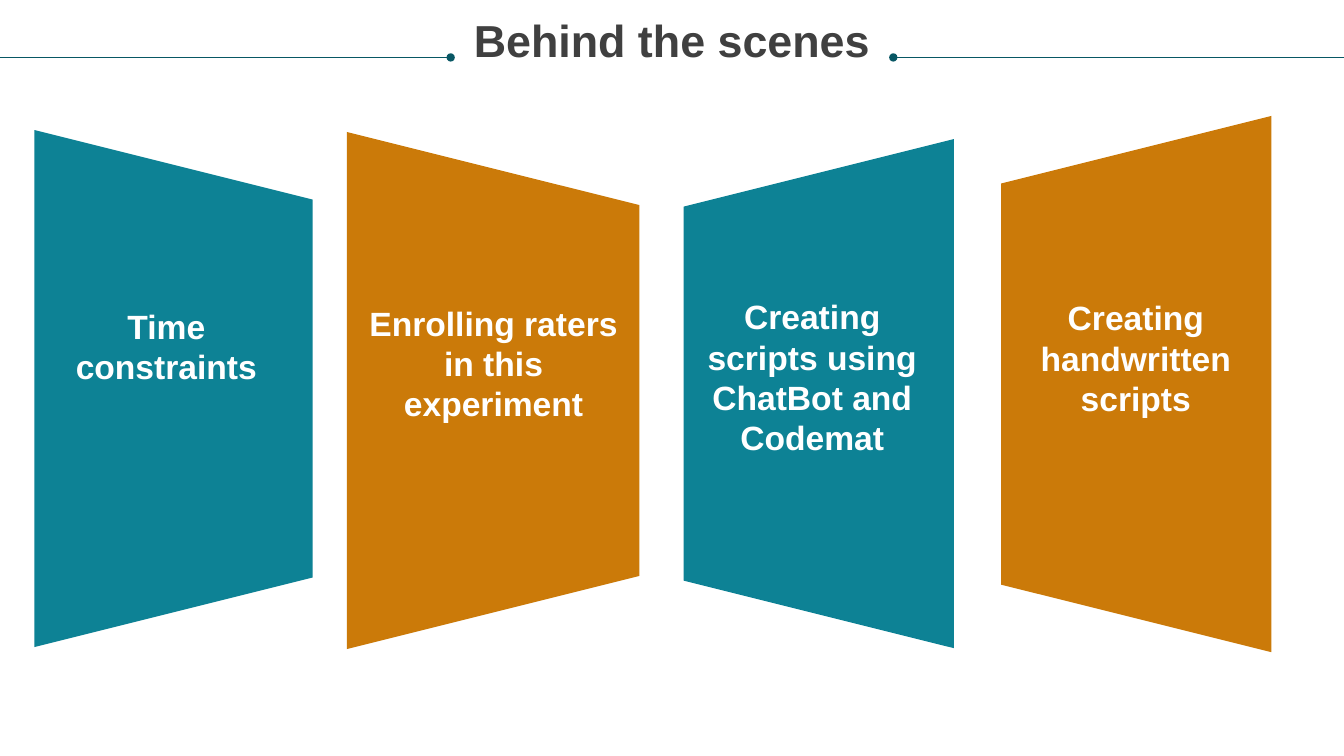
from dataclasses import dataclass

from pptx import Presentation
from pptx.dml.color import RGBColor
from pptx.enum import shapes, text
from pptx.oxml.ns import qn
from pptx.util import Inches, Pt


@dataclass(frozen=True)
class Theme:
    font: str = "Arial"
    title_size: int = 32
    label_size: int = 24
    title: str = "404040"
    label: str = "FFFFFF"
    rule: str = "085764"
    teal: str = "0D8295"
    orange: str = "CB7A09"


THEME = Theme()
SLIDE_W, SLIDE_H = 13.33, 7.5
TITLE = "Behind the scenes"
TITLE_BOX = (0.25, 0.19, 12.83, 1.33)
RULE_Y = 0.57
RULES = [(0, 4.47), (SLIDE_W, 8.86)]  # slide edge, dot beside the title

# text, text box, visible panel box (left, top, width, height), rotation, fill
PANELS = [
    ("Time constraints", (0.46, 3.03, 2.38, 0.81),
     (0.34, 1.29, 2.76, 5.13), 90, THEME.teal),
    ("Enrolling raters in this experiment", (3.62, 3, 2.55, 1.21),
     (3.44, 1.31, 2.9, 5.13), 90, THEME.orange),
    ("Creating scripts using ChatBot and Codemat", (6.88, 2.94, 2.35, 1.62),
     (6.78, 1.38, 2.68, 5.05), 270, THEME.teal),
    ("Creating handwritten scripts", (10.29, 2.95, 1.95, 1.21),
     (9.93, 1.15, 2.68, 5.32), 270, THEME.orange),
]


def rgb(color):
    return RGBColor.from_string(color)


def inches(values):
    return [Inches(v) for v in values]


def write(shape, content, size, color, spacing=1.0):
    tf = shape.text_frame
    frame = dict(word_wrap=True, auto_size=text.MSO_AUTO_SIZE.NONE,
                 vertical_anchor=text.MSO_ANCHOR.TOP, margin_left=0,
                 margin_right=0, margin_top=0, margin_bottom=0)
    for name, value in frame.items():
        setattr(tf, name, value)
    p = tf.paragraphs[0]
    p.alignment = text.PP_ALIGN.CENTER
    p.line_spacing = spacing
    p.space_before = Pt(0)
    r = p.add_run()
    r.text = content
    for name, value in dict(name=THEME.font, size=Pt(size), bold=True).items():
        setattr(r.font, name, value)
    r.font.color.rgb = rgb(color)


def add_title(s):
    title = s.shapes.title
    for name, value in zip(("left", "top", "width", "height"), inches(TITLE_BOX)):
        setattr(title, name, value)
    write(title, TITLE, THEME.title_size, THEME.title, spacing=0.9)


def add_rule(s, edge, dot):
    line = s.shapes.add_connector(shapes.MSO_CONNECTOR.STRAIGHT,
                                  *inches((edge, RULE_Y, dot, RULE_Y)))
    line.line.color.rgb = rgb(THEME.rule)
    line.line.width = Pt(0.5)
    sp_pr = line.line._get_or_add_ln().getparent()
    tail = sp_pr.find(qn("a:ln")).makeelement(qn("a:tailEnd"), {"type": "oval"})
    sp_pr.find(qn("a:ln")).append(tail)
    sp_pr.append(sp_pr.makeelement(qn("a:effectLst"), {}))


def add_panel(s, box, rotation, fill):
    """Draw a trapezoid turned on its side so that it fills the visible box."""
    left, top, width, height = box
    shift = (height - width) / 2
    sp = s.shapes.add_shape(shapes.MSO_SHAPE.TRAPEZOID,
                            *inches((left - shift, top + shift, height, width)))
    sp.rotation = rotation
    sp.shadow.inherit = False
    sp.fill.solid()
    sp.fill.fore_color.rgb = rgb(fill)
    sp.line.fill.background()


def main():
    prs = Presentation()
    prs.slide_width, prs.slide_height = inches((SLIDE_W, SLIDE_H))
    s = prs.slides.add_slide(prs.slide_layouts[5])
    add_title(s)
    for edge, dot in RULES:
        add_rule(s, edge, dot)
    for label, label_box, panel_box, rotation, fill in PANELS:
        add_panel(s, panel_box, rotation, fill)
        tb = s.shapes.add_textbox(*inches(label_box))
        write(tb, label, THEME.label_size, THEME.label)
    prs.save("out.pptx")


if __name__ == "__main__":
    main()
